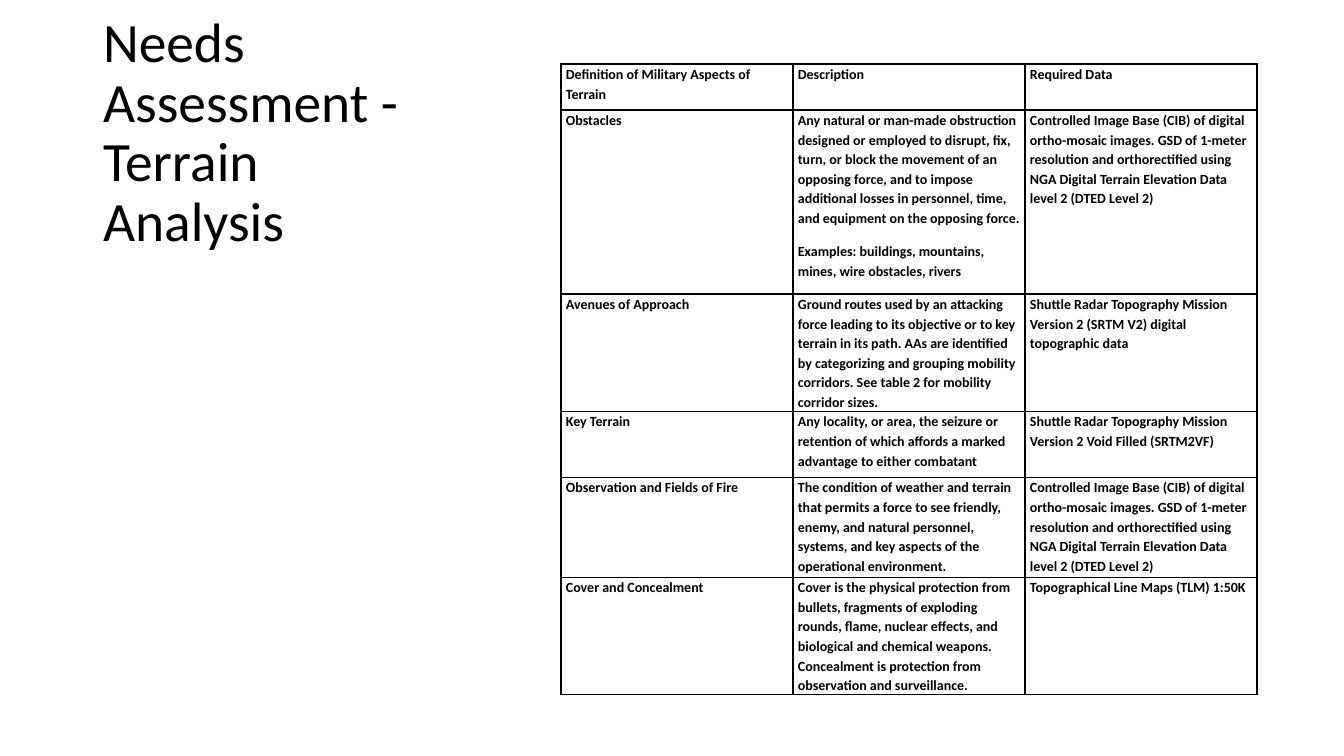
from lxml.etree import SubElement
from pptx import Presentation
from pptx.dml.color import RGBColor
from pptx.enum.text import MSO_ANCHOR, MSO_AUTO_SIZE, PP_ALIGN
from pptx.oxml.ns import qn
from pptx.util import Emu, Pt

BLACK = RGBColor(0, 0, 0)
FONT = "Calibri"
SCALE = 914400 / 100.8

COL = 232
HEIGHTS = [46, 184, 117, 66, 100, 117]
IMAGES = (
    "Controlled Image Base (CIB) of digital ortho-mosaic images. GSD of 1-meter "
    "resolution and orthorectified using NGA Digital Terrain Elevation Data "
    "level 2 (DTED Level 2)"
)
ROWS = [
    [
        ["Definition of Military Aspects of Terrain"],
        ["Description"],
        ["Required Data"],
    ],
    [
        ["Obstacles"],
        [
            "Any natural or man-made obstruction designed or employed to disrupt, "
            "fix, turn, or block the movement of an opposing force, and to impose "
            "additional losses in personnel, time, and equipment on the opposing force.",
            "Examples: buildings, mountains, mines, wire obstacles, rivers",
        ],
        [IMAGES],
    ],
    [
        ["Avenues of Approach"],
        [
            "Ground routes used by an attacking force leading to its objective or to "
            "key terrain in its path. AAs are identified by categorizing and grouping "
            "mobility corridors. See table 2 for mobility corridor sizes."
        ],
        ["Shuttle Radar Topography Mission Version 2 (SRTM V2) digital topographic data"],
    ],
    [
        ["Key Terrain"],
        [
            "Any locality, or area, the seizure or retention of which affords a "
            "marked advantage to either combatant"
        ],
        ["Shuttle Radar Topography Mission Version 2 Void Filled (SRTM2VF)"],
    ],
    [
        ["Observation and Fields of Fire"],
        [
            "The condition of weather and terrain that permits a force to see "
            "friendly, enemy, and natural personnel, systems, and key aspects of "
            "the operational environment."
        ],
        [IMAGES],
    ],
    [
        ["Cover and Concealment"],
        [
            "Cover is the physical protection from bullets, fragments of exploding "
            "rounds, flame, nuclear effects, and biological and chemical weapons. "
            "Concealment is protection from observation and surveillance."
        ],
        ["Topographical Line Maps (TLM) 1:50K"],
    ],
]


def px(count):
    return Emu(round(count * SCALE))


def add_run(para, text, size, bold=False):
    run = para.add_run()
    run.text = text
    run.font.name = FONT
    run.font.size = Pt(size)
    run.font.bold = bold
    run.font.color.rgb = BLACK


def set_title(slide, text):
    title = slide.shapes.title
    title.left, title.top, title.width, title.height = map(px, (93, 40, 343, 188))
    frame = title.text_frame
    frame.word_wrap = True
    frame.auto_size = MSO_AUTO_SIZE.NONE
    frame.vertical_anchor = MSO_ANCHOR.MIDDLE
    para = frame.paragraphs[0]
    para.alignment = PP_ALIGN.LEFT
    para.line_spacing = 0.9
    add_run(para, text, 39.6)


def add_border(cell):
    props = cell._tc.get_or_add_tcPr()
    for side in ("L", "R", "T", "B"):
        line = SubElement(props, qn(f"a:ln{side}"), w=str(Pt(1)))
        fill = SubElement(line, qn("a:solidFill"))
        SubElement(fill, qn("a:srgbClr"), val=str(BLACK))


def fill_cell(cell, texts):
    cell.margin_left = cell.margin_right = px(5)
    cell.margin_top = cell.margin_bottom = 0
    cell.vertical_anchor = MSO_ANCHOR.TOP
    add_border(cell)
    cell.fill.background()
    frame = cell.text_frame
    for index, text in enumerate(texts):
        para = frame.add_paragraph() if index else frame.paragraphs[0]
        para.line_spacing = 1.15
        para.space_after = Pt(10)
        add_run(para, text, 10, True)


def add_grid(slide, left, top):
    count = len(ROWS[0])
    shape = slide.shapes.add_table(
        len(ROWS), count, px(left), px(top), px(COL * count), px(sum(HEIGHTS))
    )
    table = shape.table
    table.first_row = table.horz_banding = False
    for column in table.columns:
        column.width = px(COL)
    for row, height, texts in zip(table.rows, HEIGHTS, ROWS):
        row.height = px(height)
        for cell, lines in zip(row.cells, texts):
            fill_cell(cell, lines)


def main():
    deck = Presentation()
    deck.slide_width, deck.slide_height = px(1344), px(756)
    slide = deck.slides.add_slide(deck.slide_layouts[5])
    set_title(slide, "Needs Assessment - Terrain Analysis")
    add_grid(slide, 561, 64)
    deck.save("out.pptx")


if __name__ == "__main__":
    main()
